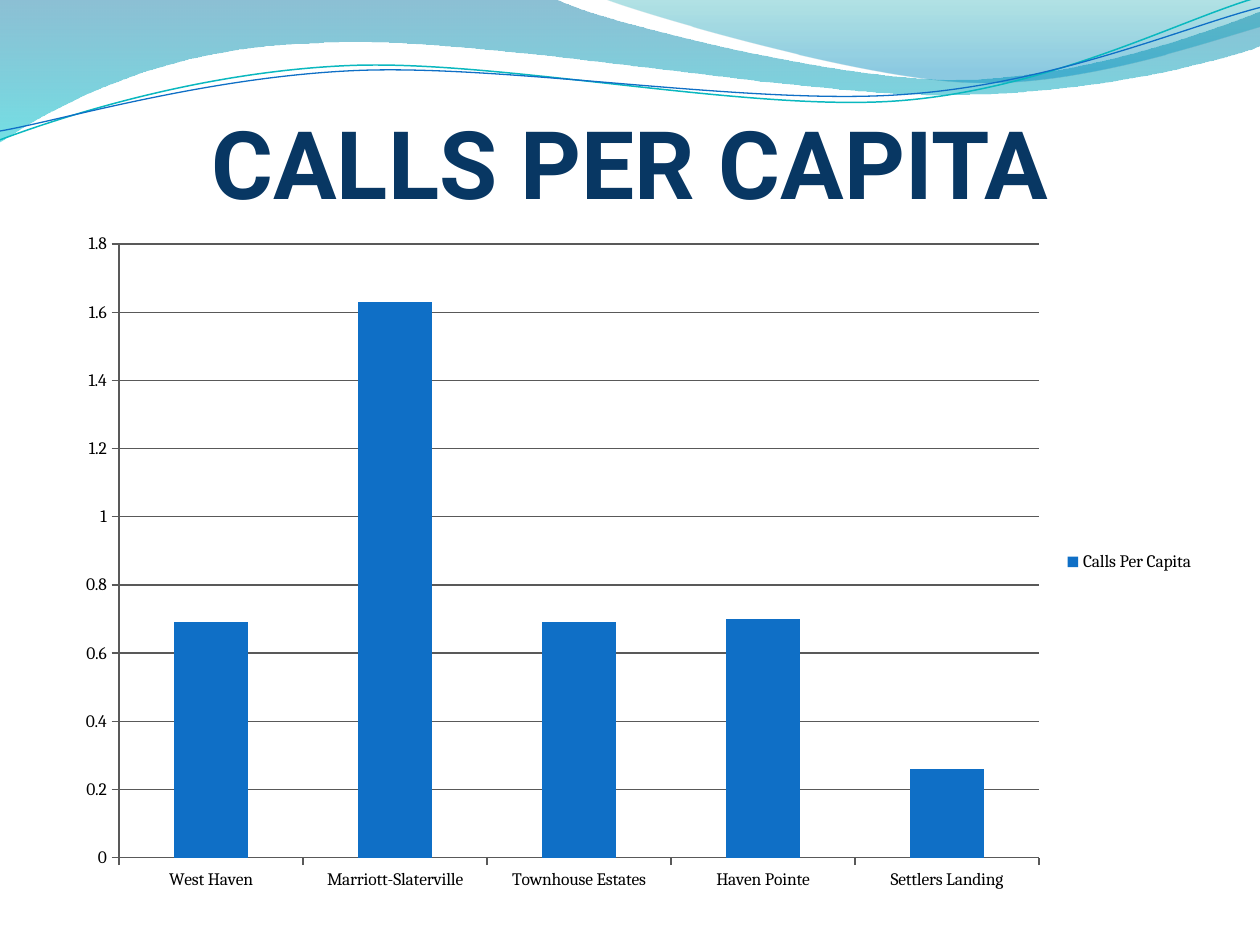
"""Build the calls per capita slide: wave header, title and column chart."""
import math
from dataclasses import dataclass

from lxml import etree
from pptx import Presentation
from pptx.chart.data import CategoryChartData
from pptx.dml.color import RGBColor
from pptx.enum import chart as charts, text
from pptx.oxml.ns import qn
from pptx.util import Inches, Pt

NAVY = RGBColor(0x08, 0x37, 0x63)
BLUE = RGBColor(0x0F, 0x6F, 0xC6)
TEAL = RGBColor(0x0A, 0xB8, 0xBF)
BLACK = RGBColor(0, 0, 0)
GRAY = RGBColor(0x59, 0x59, 0x59)
TILT = 2.7

Point = tuple[float, float]
Segment = tuple[Point, ...]


@dataclass(frozen=True)
class Stop:
    position: float
    color: RGBColor
    opacity: int


@dataclass(frozen=True)
class Band:
    start: Point
    segments: tuple[Segment, ...]
    stops: tuple[Stop, Stop]


@dataclass(frozen=True)
class Strand:
    start: Point
    segments: tuple[Segment, ...]
    center: Point
    color: RGBColor
    width: float


BANDS = (
    Band(
        (0, 0),
        (
            ((4.4, -0.01),),
            ((4.76, 0.17), (6.64, 0.63), (7.58, 0.63)),
            ((8.53, 0.63), (9.58, 0.26), (10, 0.09)),
            ((10.01, 0.36),),
            ((9.83, 0.44), (8.7, 0.76), (7.46, 0.75)),
            ((6.22, 0.75), (3.82, 0.28), (2.57, 0.34)),
            ((1.29, 0.36), (0.46, 0.83), (-0.01, 1.13)),
            ((0, 0),),
        ),
        (Stop(0, RGBColor(0x00, 0x74, 0xA1), 45), Stop(1, RGBColor(0x00, 0xC6, 0xCF), 55)),
    ),
    Band(
        (4.79, -0.01),
        (
            ((5.09, 0.11), (6.82, 0.62), (7.69, 0.65)),
            ((8.56, 0.69), (9.61, 0.32), (10, 0.21)),
            ((10, 0),),
            ((4.79, -0.01),),
        ),
        (Stop(0, RGBColor(0x00, 0xA1, 0xA9), 30), Stop(0.8, RGBColor(0x00, 0x8B, 0xBF), 45)),
    ),
)
STRANDS = (
    Strand(
        (0, 1.11),
        (
            ((0.48, 0.93), (1.58, 0.57), (2.77, 0.52)),
            ((3.95, 0.47), (5.93, 0.89), (7.13, 0.8)),
            ((8.33, 0.71), (9.38, 0.15), (9.98, -0.02)),
        ),
        (4.99, 0.58),
        TEAL,
        0.85,
    ),
    Strand(
        (0, 1.04),
        (
            ((0.47, 0.96), (1.64, 0.61), (2.83, 0.56)),
            ((4.03, 0.51), (5.97, 0.84), (7.17, 0.75)),
            ((8.36, 0.67), (9.41, 0.21), (10, 0.06)),
        ),
        (5, 0.59),
        BLUE,
        0.75,
    ),
)
CALLS = {
    "West Haven": 0.69,
    "Marriott-Slaterville": 1.63,
    "Townhouse Estates": 0.69,
    "Haven Pointe": 0.7,
    "Settlers Landing": 0.26,
}


def turn(point: Point, center: Point) -> Point:
    """Turn a point clockwise about a center by the tilt."""
    angle = math.radians(TILT)
    dx, dy = point[0] - center[0], point[1] - center[1]
    return (
        center[0] + dx * math.cos(angle) - dy * math.sin(angle),
        center[1] + dx * math.sin(angle) + dy * math.cos(angle),
    )


def draw_path(shapes, start: Point, segments: tuple[Segment, ...], close: bool):
    """Draw one freeform, with three-point segments as cubic curves."""
    builder = shapes.build_freeform(Inches(start[0]), Inches(start[1]))
    vertices = [(Inches(x), Inches(y)) for segment in segments for x, y in segment]
    builder.add_line_segments(vertices, close=close)
    shape = builder.convert_to_shape()
    shape.shadow.inherit = False
    lines = iter(list(shape.element.iter(qn("a:lnTo"))))
    for segment in segments:
        first, *others = [next(lines) for _ in segment]
        if others:
            curve = etree.Element(qn("a:cubicBezTo"))
            first.addprevious(curve)
            for line in (first, *others):
                curve.append(line[0])
                line.getparent().remove(line)
    return shape


def draw_band(shapes, band: Band) -> None:
    """Draw a closed wave with a translucent top-to-bottom gradient."""
    shape = draw_path(shapes, band.start, band.segments, close=True)
    shape.line.fill.background()
    shape.fill.gradient()
    shape.fill.gradient_angle = 270
    for target, stop in zip(shape.fill.gradient_stops, band.stops):
        target.position = stop.position
        target.color.rgb = stop.color
    for color, stop in zip(shape.element.iter(qn("a:srgbClr")), band.stops):
        etree.SubElement(color, qn("a:alpha"), val=str(stop.opacity * 1000))


def draw_strand(shapes, strand: Strand) -> None:
    """Draw an open wavy line, tilted about its center."""
    segments = tuple(
        tuple(turn(point, strand.center) for point in segment) for segment in strand.segments
    )
    shape = draw_path(shapes, turn(strand.start, strand.center), segments, close=False)
    shape.rotation = 360 - TILT
    shape.fill.background()
    shape.line.color.rgb = strand.color
    shape.line.width = Pt(strand.width)


def write_title(page) -> None:
    """Fill and place the title in front of the waves."""
    title = page.shapes.title
    title.left, title.top = Inches(0.5), Inches(0.83)
    title.width, title.height = Inches(9), Inches(0.9)
    frame = title.text_frame
    frame.text = "CALLS PER CAPITA"
    frame.auto_size = text.MSO_AUTO_SIZE.NONE
    frame.vertical_anchor = text.MSO_ANCHOR.BOTTOM
    frame.margin_left = frame.margin_right = frame.margin_bottom = 0
    frame.margin_top = Inches(0.05)
    para = frame.paragraphs[0]
    para.alignment = text.PP_ALIGN.CENTER
    font = para.runs[0].font
    font.name, font.size, font.bold = "Roboto", Pt(54), True
    font.color.rgb = NAVY
    title.element.getparent().append(title.element)


def draw_chart(page) -> None:
    """Draw the clustered columns with a legend on the right."""
    data = CategoryChartData()
    data.categories = list(CALLS)
    data.add_series("Calls Per Capita", list(CALLS.values()))
    kind = charts.XL_CHART_TYPE.COLUMN_CLUSTERED
    place = [Inches(length) for length in (0.5, 1.75, 9.08, 5.42)]
    chart = page.shapes.add_chart(kind, *place, data).chart
    chart.font.name, chart.font.size = "Cambria", Pt(10)
    chart.font.color.rgb = BLACK
    chart.has_title = False
    chart.has_legend = True
    chart.legend.position = charts.XL_LEGEND_POSITION.RIGHT
    chart.legend.include_in_layout = False
    plot = chart.plots[0]
    plot.gap_width = 150
    plot.vary_by_categories = False
    fill = plot.series[0].format.fill
    fill.solid()
    fill.fore_color.rgb = BLUE
    chart.value_axis.has_major_gridlines = True
    for axis in (chart.category_axis, chart.value_axis):
        axis.major_tick_mark = charts.XL_TICK_MARK.OUTSIDE
        axis.format.line.color.rgb = GRAY
    chart.value_axis.major_gridlines.format.line.color.rgb = GRAY


deck = Presentation()
deck.slide_width, deck.slide_height = Inches(10), Inches(7.5)
page = deck.slides.add_slide(deck.slide_layouts.get_by_name("Title Only"))
for band in BANDS:
    draw_band(page.shapes, band)
strands = page.shapes.add_group_shape()
for strand in STRANDS:
    draw_strand(strands.shapes, strand)
write_title(page)
draw_chart(page)
deck.save("out.pptx")
